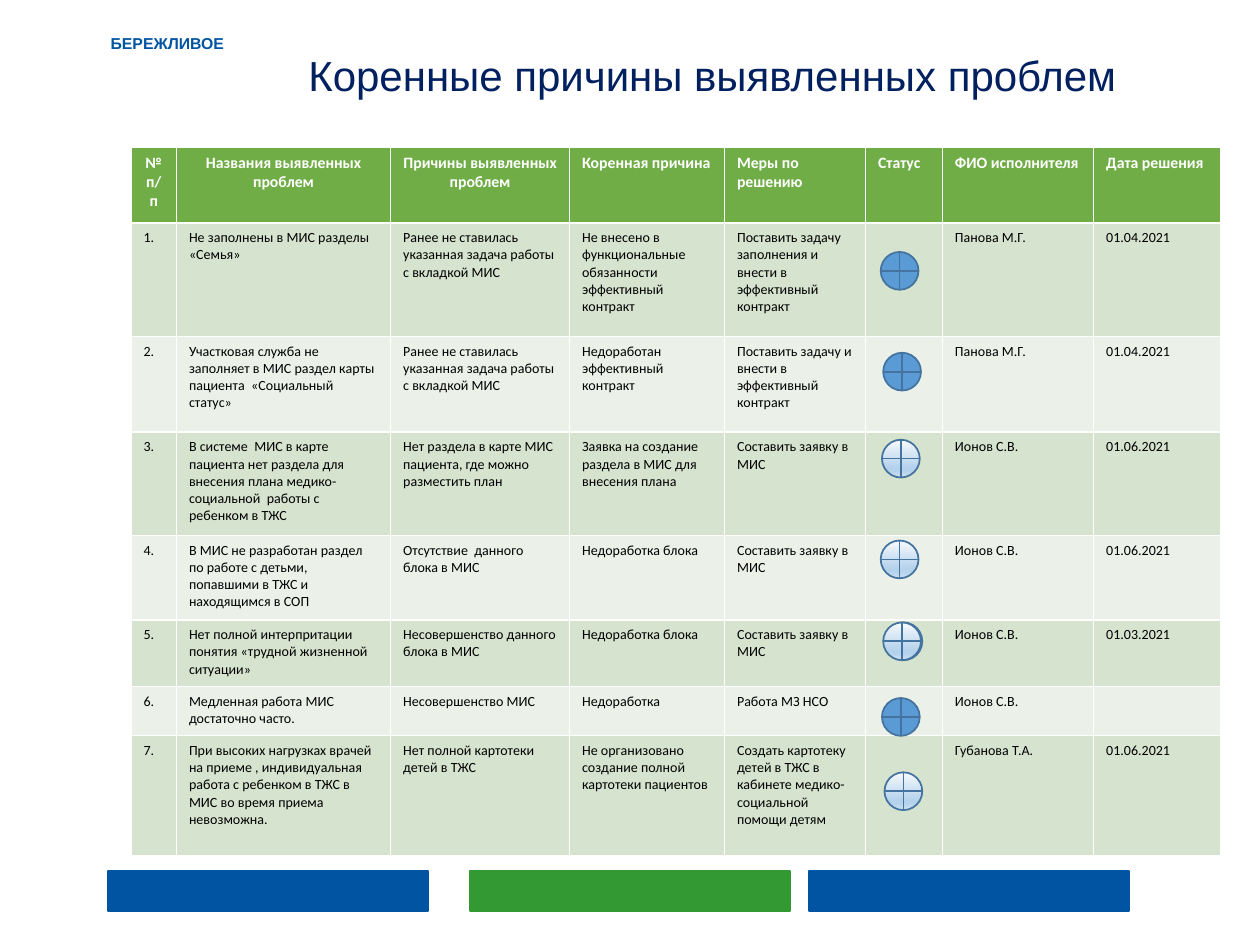
from lxml import etree
from pptx import Presentation
from pptx.dml.color import RGBColor
from pptx.enum.shapes import MSO_SHAPE
from pptx.enum.text import MSO_ANCHOR, PP_ALIGN
from pptx.oxml.ns import qn
from pptx.util import Inches, Pt

RECT, STATUS = MSO_SHAPE.RECTANGLE, MSO_SHAPE.FLOWCHART_OR
MIDDLE, TOP = MSO_ANCHOR.MIDDLE, MSO_ANCHOR.TOP
LEFT, CENTER, RIGHT = PP_ALIGN.LEFT, PP_ALIGN.CENTER, PP_ALIGN.RIGHT
COLORS = {
    "navy": "002060", "blue": "0054A1", "green": "329933",
    "header": "70AD47", "odd": "D5E3CF", "even": "EBF1E9",
    "white": "FFFFFF", "black": "000000",
    "status": "5B9BD5", "status_line": "43739E",
}
OPEN_STOPS = [(0, "F7FAFD"), (74, "B5D2EC"), (83, "B5D2EC"), (100, "CEE1F2")]
COL_WIDTHS = [0.36, 1.7, 1.42, 1.23, 1.12, 0.61, 1.2, 1.01]
ROW_HEIGHTS = [0.6, 0.9, 0.76, 0.82, 0.67, 0.53, 0.39, 0.95]
HEADERS = ["№ п/п", "Названия выявленных проблем", "Причины выявленных проблем",
           "Коренная причина", "Меры по решению", "Статус", "ФИО исполнителя",
           "Дата решения"]
PROBLEMS = [
    ("Не заполнены в МИС разделы «Семья»",
     "Ранее не ставилась указанная задача работы с вкладкой МИС",
     "Не внесено в функциональные обязанности эффективный контракт",
     "Поставить задачу заполнения и внести в эффективный контракт",
     "", "Панова М.Г.", "01.04.2021"),
    ("Участковая служба не заполняет в МИС раздел карты пациента  «Социальный статус»",
     "Ранее не ставилась указанная задача работы с вкладкой МИС",
     "Недоработан эффективный контракт",
     "Поставить задачу и внести в эффективный контракт",
     "", "Панова М.Г.", "01.04.2021"),
    ("В системе  МИС в карте пациента нет раздела для внесения плана "
     "медико-социальной  работы с ребенком в ТЖС",
     "Нет раздела в карте МИС пациента, где можно разместить план",
     "Заявка на создание раздела в МИС для внесения плана",
     "Составить заявку в МИС", "", "Ионов С.В.", "01.06.2021"),
    ("В МИС не разработан раздел по работе с детьми, попавшими в ТЖС и находящимся в СОП",
     "Отсутствие  данного блока в МИС", "Недоработка блока",
     "Составить заявку в МИС", "", "Ионов С.В.", "01.06.2021"),
    ("Нет полной интерпритации понятия «трудной жизненной ситуации»",
     "Несовершенство данного блока в МИС", "Недоработка блока",
     "Составить заявку в МИС", "", "Ионов С.В.", "01.03.2021"),
    ("Медленная работа МИС достаточно часто.",
     "Несовершенство МИС", "Недоработка", "Работа МЗ НСО", "", "Ионов С.В.", ""),
    ("При высоких нагрузках врачей на приеме , индивидуальная работа с ребенком "
     "в ТЖС в МИС во время приема невозможна.",
     "Нет полной картотеки детей в ТЖС",
     "Не организовано создание полной картотеки пациентов",
     "Создать картотеку детей в ТЖС в кабинете медико-социальной помощи детям",
     "", "Губанова Т.А.", "01.06.2021"),
]
DONE_MARKS = [(6.99, 2), (7.01, 2.8), (7, 5.54)]
OPEN_MARKS = [(7, 3.49), (6.99, 4.29), (7.02, 4.94), (7.01, 4.94), (7.02, 6.13)]


def rgb(name):
    """Return the named colour."""
    return RGBColor.from_string(COLORS[name])


def style(p, size, color, font, bold=False, align=LEFT):
    """Format one paragraph."""
    p.alignment = align
    p.font.size, p.font.bold, p.font.name = Pt(size), bold, font
    p.font.color.rgb = rgb(color)


def add_text(slide, box, text, size, color, bold=False, align=LEFT, anchor=TOP, wrap=True):
    """Place a single line of text in a box."""
    tf = slide.shapes.add_textbox(*map(Inches, box)).text_frame
    tf.word_wrap, tf.vertical_anchor = wrap, anchor
    p = tf.paragraphs[0]
    p.text = text
    style(p, size, color, "Arial", bold, align)
    return p


def add_filled(slide, kind, box, fill, line):
    """Place a preset shape with a solid fill and a thin outline."""
    sp = slide.shapes.add_shape(kind, *map(Inches, box))
    sp.shadow.inherit = False
    sp.fill.solid()
    sp.fill.fore_color.rgb = rgb(fill)
    sp.line.color.rgb = rgb(line)
    sp.line.width = Pt(1)
    return sp


def fill_open(sp):
    """Give a status mark the pale vertical gradient."""
    sp.fill.gradient()
    sp.fill.gradient_angle = 270
    stops = sp.fill._xPr.find(qn("a:gradFill")).find(qn("a:gsLst"))
    for gs in list(stops):
        stops.remove(gs)
    for pos, color in OPEN_STOPS:
        gs = etree.SubElement(stops, qn("a:gs"), pos=str(pos * 1000))
        etree.SubElement(gs, qn("a:srgbClr"), val=color)


def add_header(slide, box):
    """Place the programme label and the slide title."""
    left, top, width, height = box
    add_text(slide, (left, top, 1.11, 0.25), "БЕРЕЖЛИВОЕ", 9, "blue", bold=True, wrap=False)
    p = add_text(slide, (left + 1.05, top + 0.09, width - 1.05, height - 0.09),
                 "Коренные причины выявленных проблем", 24, "navy",
                 align=RIGHT, anchor=MIDDLE)
    p.line_spacing = 0.9


def add_problem_table(slide, box):
    """Place the table of problems, causes and measures."""
    rows = [HEADERS] + [(f"{n}.", *row) for n, row in enumerate(PROBLEMS, 1)]
    table = slide.shapes.add_table(len(rows), len(HEADERS), *map(Inches, box)).table
    for col, width in zip(table.columns, COL_WIDTHS):
        col.width = Inches(width)
    for i, (row, values) in enumerate(zip(table.rows, rows)):
        row.height = Inches(ROW_HEIGHTS[i])
        fill = "header" if i == 0 else "odd" if i % 2 else "even"
        for j, (cell, value) in enumerate(zip(row.cells, values)):
            cell.fill.solid()
            cell.fill.fore_color.rgb = rgb(fill)
            p = cell.text_frame.paragraphs[0]
            p.text = value
            if i == 0:
                style(p, 9, "white", "Calibri", True, CENTER if j < 3 else LEFT)
            else:
                style(p, 8, "black", "Calibri")


def add_status_marks(slide, size):
    """Place the round marks of the status column."""
    for left, top in DONE_MARKS + OPEN_MARKS:
        sp = add_filled(slide, STATUS, (left, top, size, size), "status", "status_line")
        if (left, top) in OPEN_MARKS:
            fill_open(sp)


def add_footer(slide, box):
    """Place the three coloured bars along the bottom."""
    left, top, width, height = box
    for offset, color in [(0, "blue"), (2.87, "green"), (width - 2.54, "blue")]:
        add_filled(slide, RECT, (left + offset, top, 2.54, height), color, color)


def main():
    """Build and save the slide."""
    prs = Presentation()
    prs.slide_width, prs.slide_height = Inches(10), Inches(7.5)
    slide = prs.slides.add_slide(prs.slide_layouts[6])
    add_header(slide, (0.78, 0.22, 8.18, 0.7))
    add_footer(slide, (0.86, 6.91, 8.1, 0.32))
    add_problem_table(slide, (1.04, 1.17, sum(COL_WIDTHS), sum(ROW_HEIGHTS)))
    add_status_marks(slide, 0.3)
    prs.save("out.pptx")


if __name__ == "__main__":
    main()
